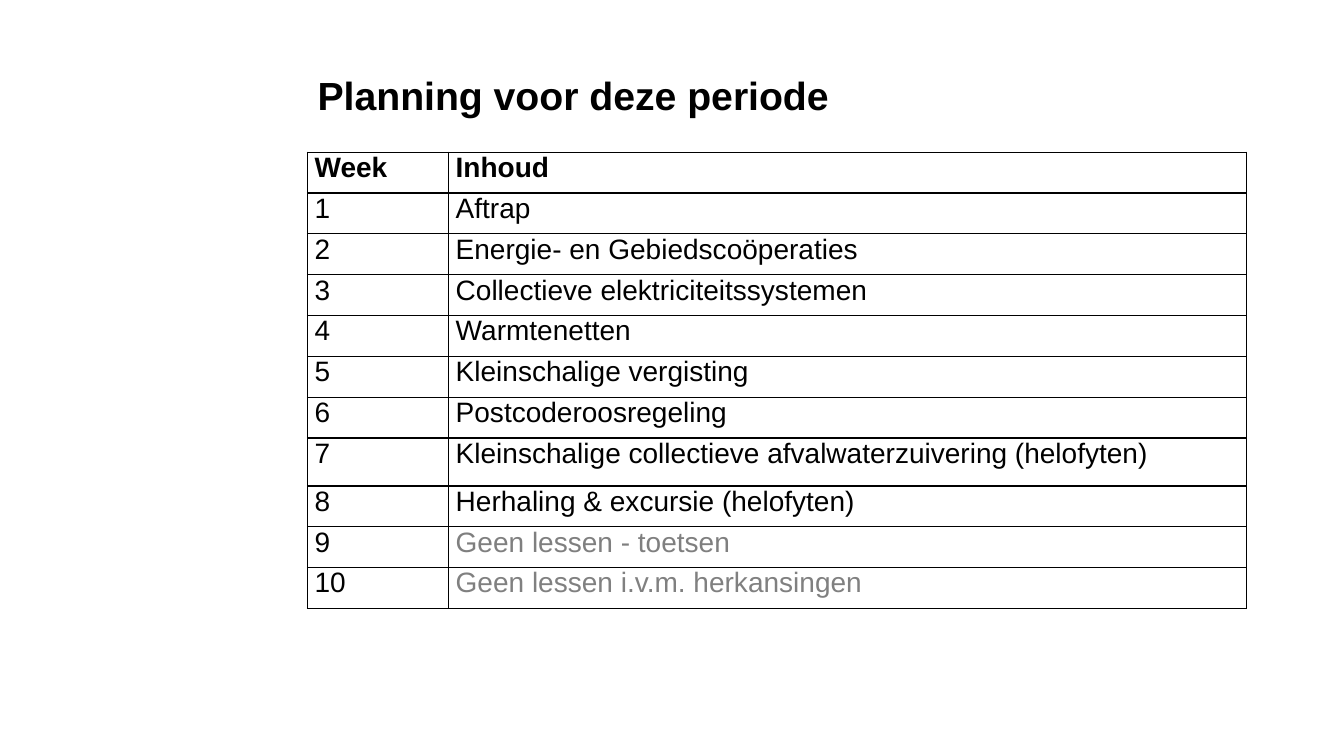
from dataclasses import dataclass

from lxml import etree
from pptx import Presentation
from pptx import util as u
from pptx.dml.color import RGBColor
from pptx.enum import text
from pptx.oxml.ns import qn

WIDE, HIGH = 13.33, 7.5
LEFT = 3.05
BLACK, GREY = "000000", "7F7F7F"


@dataclass
class Row:
    week: str
    topic: str
    ink: str = BLACK
    bold: bool = False
    extra: float = 0


ROWS = [
    Row("Week", "Inhoud", bold=True),
    Row("1", "Aftrap"),
    Row("2", "Energie- en Gebiedscoöperaties"),
    Row("3", "Collectieve elektriciteitssystemen"),
    Row("4", "Warmtenetten"),
    Row("5", "Kleinschalige vergisting"),
    Row("6", "Postcoderoosregeling"),
    Row("7", "Kleinschalige collectieve afvalwaterzuivering (helofyten)", extra=0.07),
    Row("8", "Herhaling & excursie (helofyten)"),
    Row("9", "Geen lessen - toetsen", GREY),
    Row("10", "Geen lessen i.v.m. herkansingen", "808080"),
]
COLS = (1.4, 7.91)
TOP, TALL = 1.51, 4.53
STEP = (TALL - sum(row.extra for row in ROWS)) / len(ROWS)


def add_run(para, words: str, size: float, ink: str, bold: bool) -> None:
    run = para.add_run()
    run.text = words
    font = run.font
    font.name, font.size, font.bold = "Arial", u.Pt(size), bold
    font.color.rgb = RGBColor.from_string(ink)


def add_edges(cell) -> None:
    """Draw a thin black line on all four sides of a cell."""
    props = cell._tc.get_or_add_tcPr()
    for spot, side in enumerate(("lnL", "lnR", "lnT", "lnB")):
        line = etree.Element(qn(f"a:{side}"), w=str(u.Pt(1)))
        fill = etree.SubElement(line, qn("a:solidFill"))
        etree.SubElement(fill, qn("a:srgbClr"), val=BLACK)
        props.insert(spot, line)


def fill_cell(cell, words: str, ink: str, bold: bool) -> None:
    cell.fill.background()
    cell.margin_left = cell.margin_right = u.Inches(0.07)
    cell.margin_top = cell.margin_bottom = 0
    cell.vertical_anchor = text.MSO_ANCHOR.TOP
    add_run(cell.text_frame.paragraphs[0], words, 20, ink, bold)
    add_edges(cell)


def add_title(slide) -> None:
    title = slide.shapes.title
    title.left, title.top = u.Inches(LEFT), u.Inches(0.63)
    title.width, title.height = u.Inches(9.17), u.Inches(0.88)
    frame = title.text_frame
    frame.word_wrap = True
    frame.auto_size = text.MSO_AUTO_SIZE.NONE
    frame.vertical_anchor = text.MSO_ANCHOR.TOP
    frame.margin_top = u.Inches(0.08)
    para = frame.paragraphs[0]
    para.alignment = text.PP_ALIGN.LEFT
    add_run(para, "Planning voor deze periode", 28, BLACK, True)


def add_plan(slide) -> None:
    table = slide.shapes.add_table(
        len(ROWS), len(COLS), u.Inches(LEFT), u.Inches(TOP),
        u.Inches(sum(COLS)), u.Inches(TALL)).table
    table.first_row = table.horz_banding = False
    for col, wide in zip(table.columns, COLS):
        col.width = u.Inches(wide)
    for spot, row in enumerate(ROWS):
        table.rows[spot].height = u.Inches(STEP + row.extra)
        fill_cell(table.cell(spot, 0), row.week, BLACK, row.bold)
        fill_cell(table.cell(spot, 1), row.topic, row.ink, row.bold)


def main() -> None:
    deck = Presentation()
    deck.slide_width, deck.slide_height = u.Inches(WIDE), u.Inches(HIGH)
    slide = deck.slides.add_slide(deck.slide_layouts.get_by_name("Title Only"))
    add_title(slide)
    add_plan(slide)
    deck.save("out.pptx")


if __name__ == "__main__":
    main()
